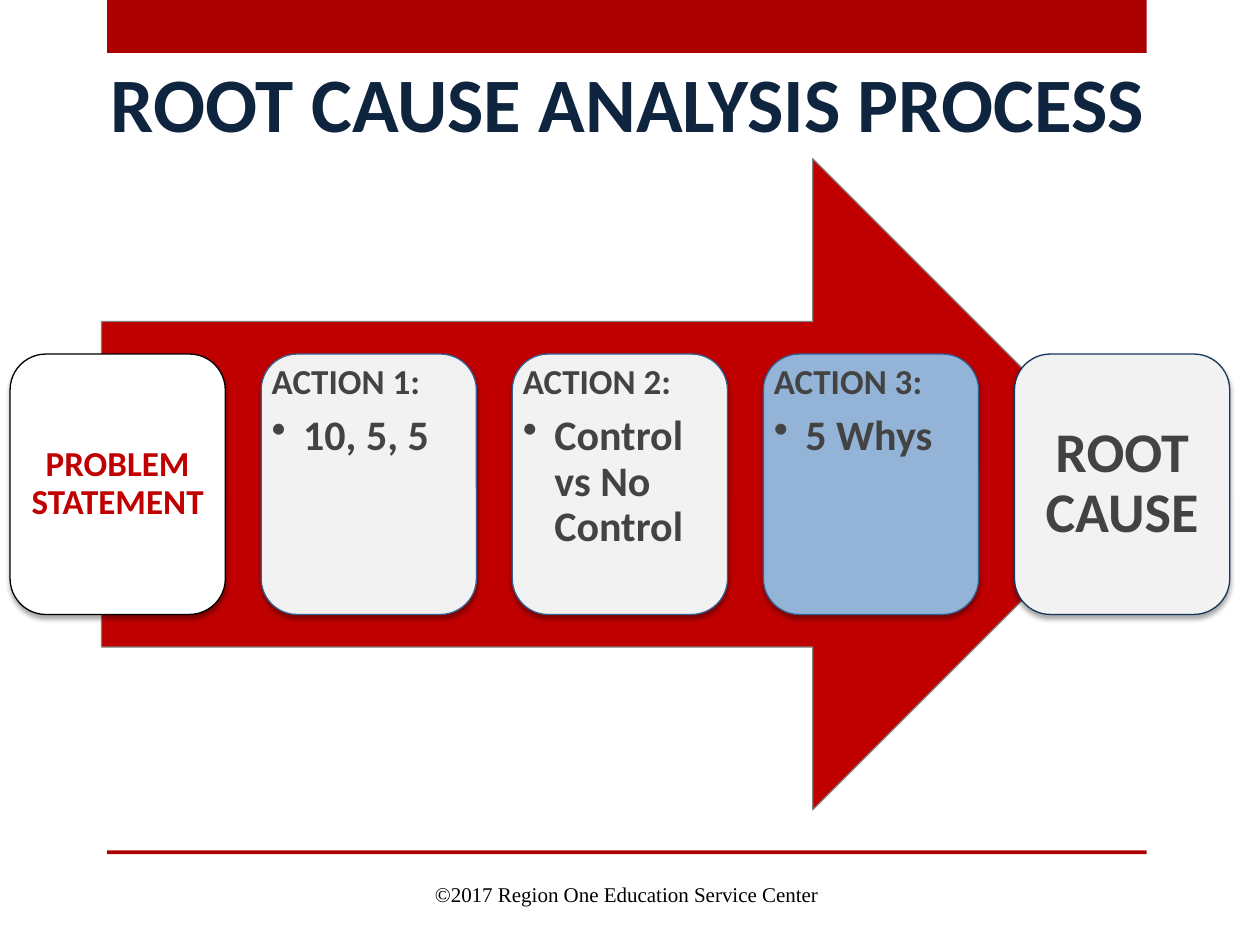
from dataclasses import dataclass

import pptx
import pptx.dml.color
import pptx.enum.shapes
import pptx.enum.text
import pptx.oxml
import pptx.oxml.ns
import pptx.util

SHAPE = pptx.enum.shapes.MSO_SHAPE
ALIGN = pptx.enum.text.PP_ALIGN
ANCHOR = pptx.enum.text.MSO_ANCHOR
Pt = pptx.util.Pt


@dataclass(frozen=True)
class Theme:
    sans: str = "Calibri"
    serif: str = "Times New Roman"
    band: str = "AD0101"
    red: str = "C00000"
    white: str = "FFFFFF"
    black: str = "000000"
    pale: str = "F2F2F2"
    active: str = "93B3D7"
    arrow_edge: str = "7F7F7F"
    action_edge: str = "366092"
    cause_edge: str = "17365D"
    ink: str = "434343"
    navy: str = "0F243E"
    title_size: int = 44
    cause_size: int = 32
    detail_size: int = 24
    label_size: int = 20
    footer_size: int = 12


THEME = Theme()


@dataclass(frozen=True)
class Box:
    left: float
    top: float
    width: float
    height: float

    def share(self, left, top, width, height):
        return Box(
            self.left + self.width * left / 100,
            self.top + self.height * top / 100,
            self.width * width / 100,
            self.height * height / 100,
        )

    def place(self):
        return [round(n) for n in (self.left, self.top, self.width, self.height)]


def rgb(value):
    return pptx.dml.color.RGBColor.from_string(value)


def add_block(slide, kind, box, fill, edge=None):
    block = slide.shapes.add_shape(kind, *box.place())
    block.shadow.inherit = False
    block.fill.solid()
    block.fill.fore_color.rgb = rgb(fill)
    if edge:
        block.line.color.rgb = rgb(edge)
        block.line.width = Pt(0.75)
    else:
        block.line.fill.background()
    return block


def add_drop_shadow(card):
    effects = card._element.spPr.find(pptx.oxml.ns.qn("a:effectLst"))
    effects.append(pptx.oxml.parse_xml(
        f'<a:outerShdw {pptx.oxml.ns.nsdecls("a")} blurRad="{Pt(3.1)}" dist="{Pt(1.8)}" '
        f'dir="5400000" algn="t" rotWithShape="0"><a:srgbClr val="{THEME.black}">'
        '<a:alpha val="35000"/></a:srgbClr></a:outerShdw>'))


def add_frame(slide, box, anchor=ANCHOR.TOP, inset=None):
    frame = slide.shapes.add_textbox(*box.place()).text_frame
    frame.word_wrap = True
    frame.vertical_anchor = anchor
    if inset is not None:
        frame.margin_left = frame.margin_right = Pt(inset)
        frame.margin_top = frame.margin_bottom = Pt(inset)
    return frame


def write(paragraph, text, size, color, font=THEME.sans, bold=True, align=ALIGN.LEFT, spacing=None):
    paragraph.alignment = align
    paragraph.line_spacing = spacing
    run = paragraph.add_run()
    run.text = text
    run.font.name = font
    run.font.size = Pt(size)
    run.font.bold = bold
    run.font.color.rgb = rgb(color)


def add_bullet(paragraph):
    paragraph.level = 1
    paragraph.space_before = Pt(7)
    properties = paragraph._p.get_or_add_pPr()
    properties.set("marL", str(Pt(18)))
    properties.set("indent", str(-Pt(18)))
    for bullet in (f'<a:buClr {{}}><a:srgbClr val="{THEME.ink}"/></a:buClr>',
                   '<a:buChar {} char="•"/>'):
        properties.append(pptx.oxml.parse_xml(bullet.format(pptx.oxml.ns.nsdecls("a"))))


def add_card(slide, box, fill, edge):
    add_drop_shadow(add_block(slide, SHAPE.ROUNDED_RECTANGLE, box, fill, edge))


def add_endpoint(slide, box, text, size, color, fill, edge, inset):
    add_card(slide, box, fill, edge)
    frame = add_frame(slide, box, ANCHOR.MIDDLE, inset)
    write(frame.paragraphs[0], text, size, color, align=ALIGN.CENTER, spacing=0.9)


def add_action(slide, box, label, detail, fill):
    add_card(slide, box, fill, THEME.action_edge)
    frame = add_frame(slide, box, inset=6)
    write(frame.paragraphs[0], label, THEME.label_size, THEME.ink, spacing=0.9)
    detail_line = frame.add_paragraph()
    add_bullet(detail_line)
    write(detail_line, detail, THEME.detail_size, THEME.ink, spacing=0.9)


def add_process(slide, box):
    add_block(slide, SHAPE.RIGHT_ARROW, box.share(7.5, 0, 85, 100), THEME.red, THEME.arrow_edge)
    card_width = 100 / (5 + 4 / 6)
    problem, *steps, cause = [
        box.share(column * card_width * 7 / 6, 30, card_width, 40) for column in range(5)
    ]
    add_endpoint(slide, problem, "PROBLEM STATEMENT", THEME.label_size, THEME.red,
                 THEME.white, THEME.black, 6)
    actions = [
        ("ACTION 1:", "10, 5, 5", THEME.pale),
        ("ACTION 2:", "Control vs No Control", THEME.pale),
        ("ACTION 3:", "5 Whys", THEME.active),
    ]
    for step, action in zip(steps, actions):
        add_action(slide, step, *action)
    add_endpoint(slide, cause, "ROOT CAUSE", THEME.cause_size, THEME.ink,
                 THEME.pale, THEME.cause_edge, 9.6)


def add_bands(slide, box):
    for top, height in ((0, 5.6), (90, 0.4)):
        add_block(slide, SHAPE.RECTANGLE, box.share(0, top, 100, height), THEME.band)


def add_title(slide, box):
    write(add_frame(slide, box).paragraphs[0], "ROOT CAUSE ANALYSIS PROCESS",
          THEME.title_size, THEME.navy, align=ALIGN.CENTER)


def add_footer(slide, box):
    write(add_frame(slide, box, ANCHOR.MIDDLE).paragraphs[0],
          "©2017 Region One Education Service Center", THEME.footer_size, THEME.black,
          THEME.serif, False, ALIGN.CENTER)


def main():
    deck = pptx.Presentation()
    deck.slide_width = pptx.util.Inches(10)
    deck.slide_height = pptx.util.Inches(7.5)
    slide = deck.slides.add_slide(deck.slide_layouts[6])
    page = Box(0, 0, deck.slide_width, deck.slide_height)
    add_bands(slide, page.share(8.5, 0, 82.5, 100))
    add_process(slide, page.share(0.8, 16.8, 96.8, 68.9))
    add_title(slide, page.share(6, 5.2, 87.7, 18.9))
    add_footer(slide, page.share(8.7, 92, 82.1, 5.3))
    deck.save("out.pptx")


if __name__ == "__main__":
    main()
